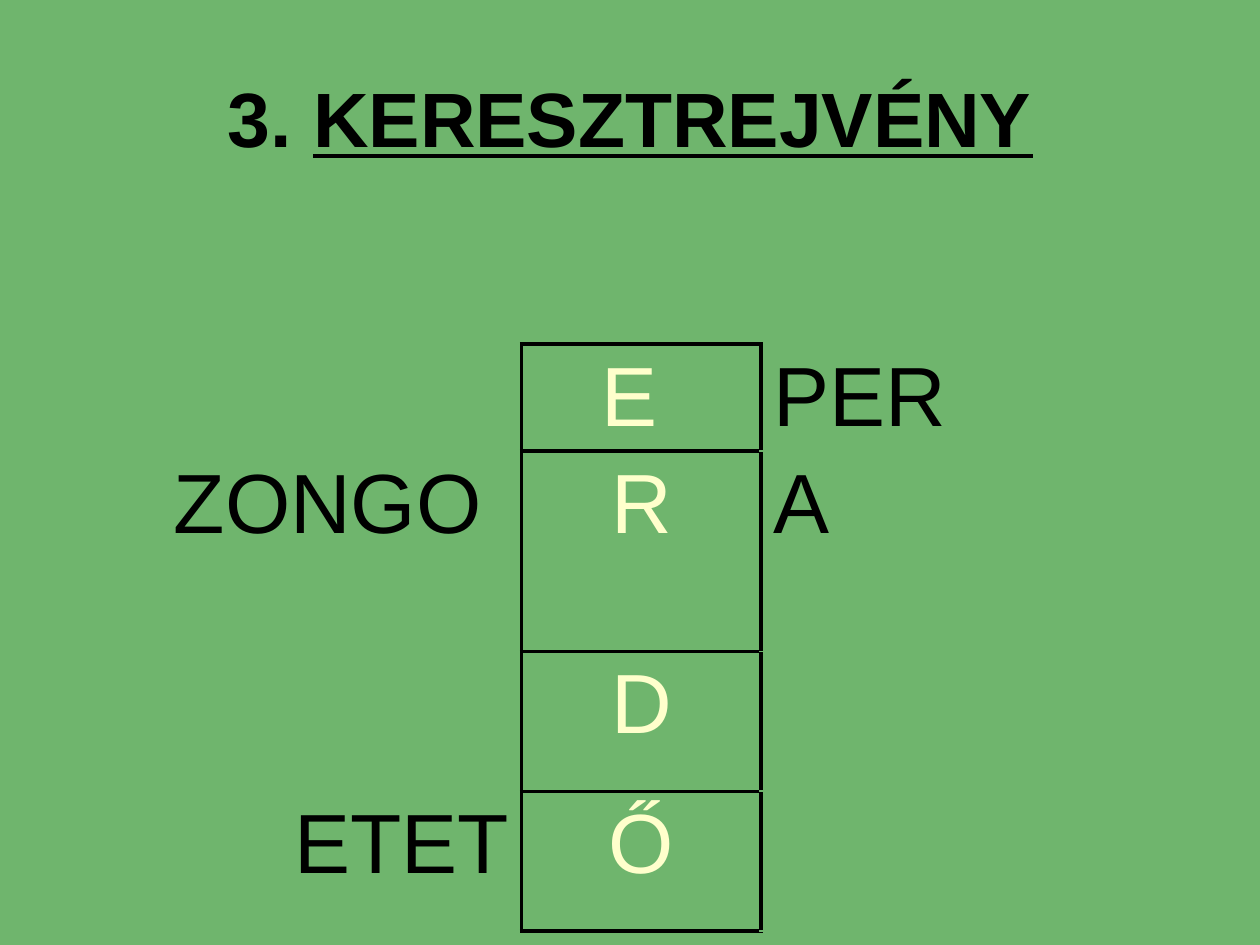
from dataclasses import dataclass
from lxml.etree import SubElement as Sub
from pptx import Presentation
from pptx.dml.color import RGBColor as RGB
from pptx.enum.text import MSO_ANCHOR as Anchor, PP_ALIGN as Align
from pptx.oxml.ns import qn
from pptx.util import Inches, Pt


@dataclass(frozen=True)
class Theme:
    back: str = "6FB56D"
    ink: str = "000000"
    key: str = "FFFFCC"
    font: str = "Arial"
    head: int = 44
    body: int = 48
    thick: float = 2.25
    thin: float = 1


THEME = Theme()
COLS = (3.39, 1.9, 3.71)
ROWS = (0.85, 1.59, 1.11, 1.11)
WORDS = (
    ("", "E ", "PER"),
    ("ZONGO", "R", "A"),
    ("", "D", ""),
    ("ETET", "Ő", ""),
)
KEY = 1


def style(para, size, color, align):
    para.alignment = align
    para.font.name = THEME.font
    para.font.size = Pt(size)
    para.font.color.rgb = RGB.from_string(color)


def place(shape, box):
    shape.left, shape.top, shape.width, shape.height = map(Inches, box)


def border(cell, col):
    props = cell._tc.get_or_add_tcPr()
    dark = {KEY - 1: "R", KEY: "LRTB", KEY + 1: "L"}[col]
    for spot, side in enumerate("LRTB"):
        bold = side in dark
        width = THEME.thick if bold else THEME.thin
        line = Sub(props, qn(f"a:ln{side}"), w=str(Pt(width)))
        props.remove(line)
        props.insert(spot, line)
        fill = Sub(line, qn("a:solidFill"))
        Sub(fill, qn("a:srgbClr"), val=THEME.ink if bold else THEME.back)


def add_title(slide, box):
    title = slide.shapes.title
    place(title, box)
    frame = title.text_frame
    frame.word_wrap = True
    frame.vertical_anchor = Anchor.MIDDLE
    para = frame.paragraphs[0]
    style(para, THEME.head, THEME.ink, Align.CENTER)
    para.font.bold = True
    para.add_run().text = "3. "
    word = para.add_run()
    word.text = "KERESZTREJVÉNY"
    word.font.underline = True


def add_grid(slide, box):
    table = slide.shapes.add_table(len(ROWS), len(COLS), *map(Inches, box)).table
    table.first_row = table.horz_banding = False
    for col, width in zip(table.columns, COLS):
        col.width = Inches(width)
    for row, height in zip(table.rows, ROWS):
        row.height = Inches(height)
    aligns = (Align.RIGHT, Align.CENTER, Align.LEFT)
    for r, words in enumerate(WORDS):
        for c, word in enumerate(words):
            cell = table.cell(r, c)
            cell.fill.background()
            border(cell, c)
            if word:
                cell.text = word
                para = cell.text_frame.paragraphs[0]
                color = THEME.key if c == KEY else THEME.ink
                style(para, THEME.body, color, aligns[c])
                para.space_before = Pt(0)
    first = table.cell(1, 0)
    first.margin_left = Inches(0.63)
    first.text_frame.paragraphs[0].alignment = Align.LEFT


def main():
    deck = Presentation()
    deck.slide_width, deck.slide_height = Inches(10), Inches(7.5)
    slide = deck.slides.add_slide(deck.slide_layouts[5])
    fill = slide.background.fill
    fill.solid()
    fill.fore_color.rgb = RGB.from_string(THEME.back)
    add_title(slide, (0.5, 0.3, 9, 1.25))
    add_grid(slide, (0.75, 2.73, sum(COLS), sum(ROWS)))
    deck.save("out.pptx")


if __name__ == "__main__":
    main()
